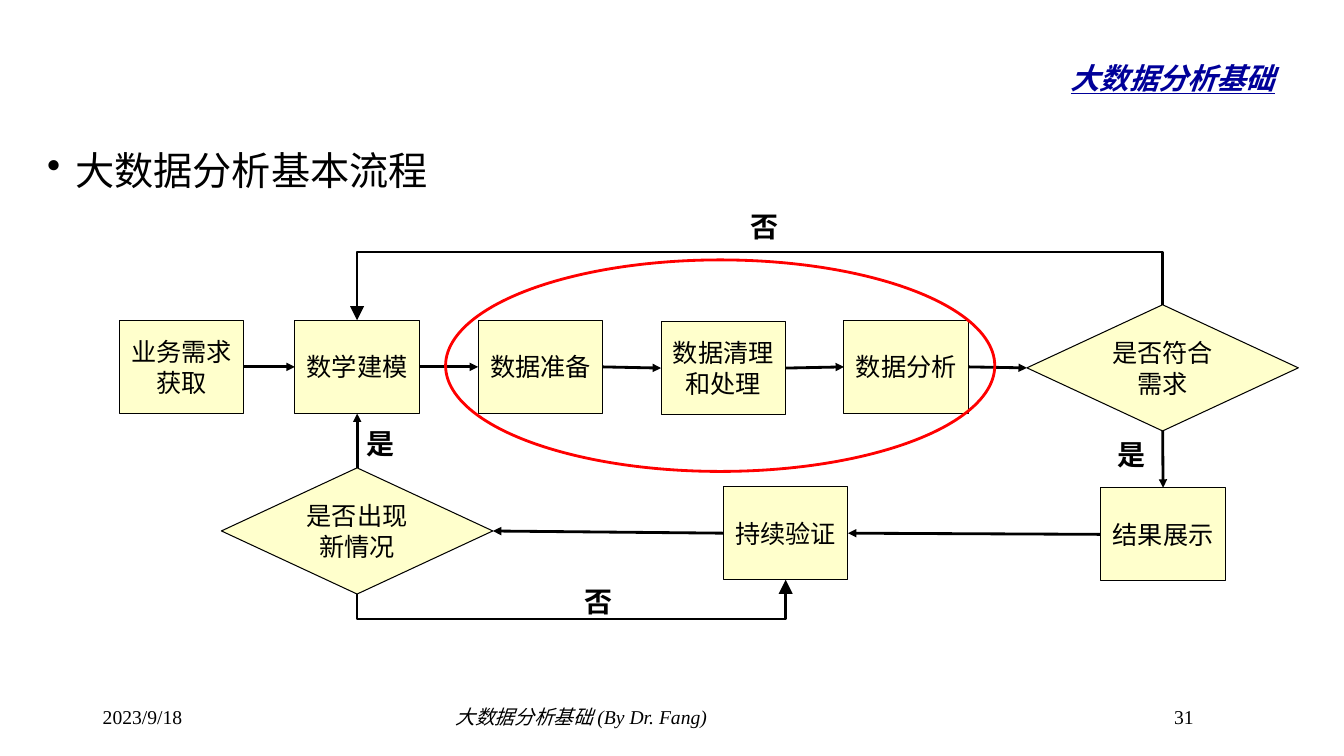
import pptx
import pptx.util
import pptx.dml.color
import pptx.enum.shapes
import pptx.enum.text
import pptx.oxml.ns
from lxml import etree

Cm = pptx.util.Cm
Pt = pptx.util.Pt
RGBColor = pptx.dml.color.RGBColor
Shape = pptx.enum.shapes.MSO_SHAPE
Link = pptx.enum.shapes.MSO_CONNECTOR
Align = pptx.enum.text.PP_ALIGN
Anchor = pptx.enum.text.MSO_ANCHOR
qn = pptx.oxml.ns.qn

BLACK = RGBColor(0, 0, 0)
NAVY = RGBColor(0, 0, 0x99)
CREAM = RGBColor(0xFF, 0xFF, 0xCC)
RED = RGBColor(0xFF, 0, 0)
SERIF = "Times New Roman"
SANS = "Noto Sans CJK SC"
TOP, LEFT, BASE, RIGHT = range(4)


def put(item, values):
    for key, value in values.items():
        setattr(item, key, value)


def add(parent, tag, **values):
    child = etree.SubElement(parent, qn(tag))
    for key, value in values.items():
        child.set(key, value)
    return child


class Board:
    box_size = (3.14, 2.35)
    gem_size = (6.84, 3.18)
    tag_size = (1.22, 1.12)

    def __init__(self, deck):
        self.slide = deck.slides.add_slide(deck.slide_layouts[5])
        self.shapes = self.slide.shapes

    def fill_in(self, shape, text, font, align=Align.LEFT, anchor=Anchor.TOP):
        frame = shape.text_frame
        put(frame, {"word_wrap": True, "vertical_anchor": anchor,
                    "auto_size": pptx.enum.text.MSO_AUTO_SIZE.NONE})
        par = frame.paragraphs[0]
        par.alignment = align
        run = par.add_run()
        run.text = text
        look = {"name": SERIF, **font}
        tint = look.pop("color", BLACK)
        put(run.font, look)
        run.font.color.rgb = tint
        props = run._r.get_or_add_rPr()
        add(props, "a:ea", typeface=SANS)
        return par, props

    def title(self, text, place):
        shape = self.shapes.title
        put(shape, dict(zip(("left", "top", "width", "height"), map(Cm, place))))
        font = {"size": Pt(36), "bold": True, "italic": True,
                "underline": True, "color": NAVY}
        props = self.fill_in(shape, text, font, Align.RIGHT, Anchor.MIDDLE)[1]
        props.set("baseline", "-25000")

    def text(self, text, place, **font):
        shape = self.shapes.add_textbox(*map(Cm, place))
        return self.fill_in(shape, text, font)[0]

    def bullet(self, text, place):
        par = self.text(text, place, size=Pt(28))
        props = par._p.get_or_add_pPr()
        props.set("marL", str(Cm(0.71)))
        props.set("indent", str(-Cm(0.71)))
        add(props, "a:buChar", char="•")
        par.line_spacing = 1.2

    def shape(self, kind, place, line, width, fill=None):
        shape = self.shapes.add_shape(kind, *map(Cm, place))
        shape.shadow.inherit = False
        if fill is None:
            shape.fill.background()
        else:
            shape.fill.solid()
            shape.fill.fore_color.rgb = fill
        shape.line.color.rgb = line
        shape.line.width = Pt(width)
        return shape

    def step(self, text, left, top, kind=Shape.RECTANGLE):
        size = self.gem_size if kind == Shape.DIAMOND else self.box_size
        shape = self.shape(kind, (left, top, *size), BLACK, 0.75, CREAM)
        self.fill_in(shape, text, {"size": Pt(18), "name": SANS},
                     Align.CENTER, Anchor.MIDDLE)
        return shape

    def label(self, text, left, top):
        self.text(text, (left, top, *self.tag_size),
                  size=Pt(20), name=SANS, bold=True)

    def ink(self, wire, head):
        wire.line.color.rgb = BLACK
        wire.line.width = Pt(2)
        props = wire._element.spPr
        add(props.find(qn("a:ln")), "a:tailEnd", type="triangle", w=head, len=head)
        add(props, "a:effectLst")

    def arrow(self, start, leave, end, entry):
        wire = self.shapes.add_connector(Link.STRAIGHT, 0, 0, 0, 0)
        wire.begin_connect(start, leave)
        wire.end_connect(end, entry)
        self.ink(wire, "med")

    def loop(self, start, end, edge, rail):
        spots = []
        for shape in (start, end):
            drop = shape.height if edge == BASE else 0
            spots.append((shape.left + shape.width // 2, shape.top + drop))
        (x1, y1), (x2, y2) = spots
        wide, high = abs(y2 - y1), abs(x2 - x1)
        left = (x1 + x2 - wide) // 2
        top = (y1 + y2 - high) // 2
        wire = self.shapes.add_connector(
            Link.ELBOW, left + wide, top + high, left, top)
        props = wire._element.spPr
        turn = 270 if x2 < x1 else 90
        props.find(qn("a:xfrm")).set("rot", str(turn * 60000))
        bend = round((Cm(rail) - y1) / (y2 - y1) * 100000)
        shape = props.find(qn("a:prstGeom"))
        guides = shape.find(qn("a:avLst"))
        if guides is None:
            guides = add(shape, "a:avLst")
        add(guides, "a:gd", name="adj1", fmla=f"val {bend}")
        self.ink(wire, "lg")


def main():
    deck = pptx.Presentation()
    put(deck, {"slide_width": Cm(33.87), "slide_height": Cm(19.05)})
    board = Board(deck)
    board.title("大数据分析基础", (4.93, 0.13, 27.46, 2.79))
    board.bullet("大数据分析基本流程", (0.94, 3.33, 32, 14.2))
    small = Pt(14)
    board.text("31", (29.34, 17.65, 2.21, 1.02), size=small)
    board.text("大数据分析基础 (By Dr. Fang)", (11.23, 17.65, 16.31, 1.02),
               size=small, italic=True)
    board.text("2023/9/18", (2.34, 17.65, 7.62, 1.02), size=small)

    need = board.step("业务需求获取", 3.01, 8.07)
    model = board.step("数学建模", 7.43, 8.07)
    ready = board.step("数据准备", 12.05, 8.07)
    clean = board.step("数据清理和处理", 16.66, 8.1)
    study = board.step("数据分析", 21.27, 8.07)
    fresh = board.step("是否出现新情况", 5.58, 11.79, Shape.DIAMOND)
    show = board.step("结果展示", 27.74, 12.29)
    test = board.step("持续验证", 18.23, 12.26)
    check = board.step("是否符合需求", 25.88, 7.68, Shape.DIAMOND)

    chain = [need, model, ready, clean, study, check]
    for start, end in zip(chain, chain[1:]):
        board.arrow(start, RIGHT, end, LEFT)
    board.arrow(check, BASE, show, TOP)
    board.arrow(show, LEFT, test, RIGHT)
    board.arrow(test, LEFT, fresh, RIGHT)
    board.arrow(fresh, TOP, model, BASE)
    board.loop(check, model, TOP, 6.35)
    board.loop(fresh, test, BASE, 15.6)

    for text, left, top in (("否", 18.67, 5.16), ("否", 14.48, 14.6),
                            ("是", 8.99, 10.62), ("是", 27.91, 10.9)):
        board.label(text, left, top)
    board.shape(Shape.OVAL, (11.23, 6.55, 13.84, 5.33), RED, 2)
    deck.save("out.pptx")


if __name__ == "__main__":
    main()
